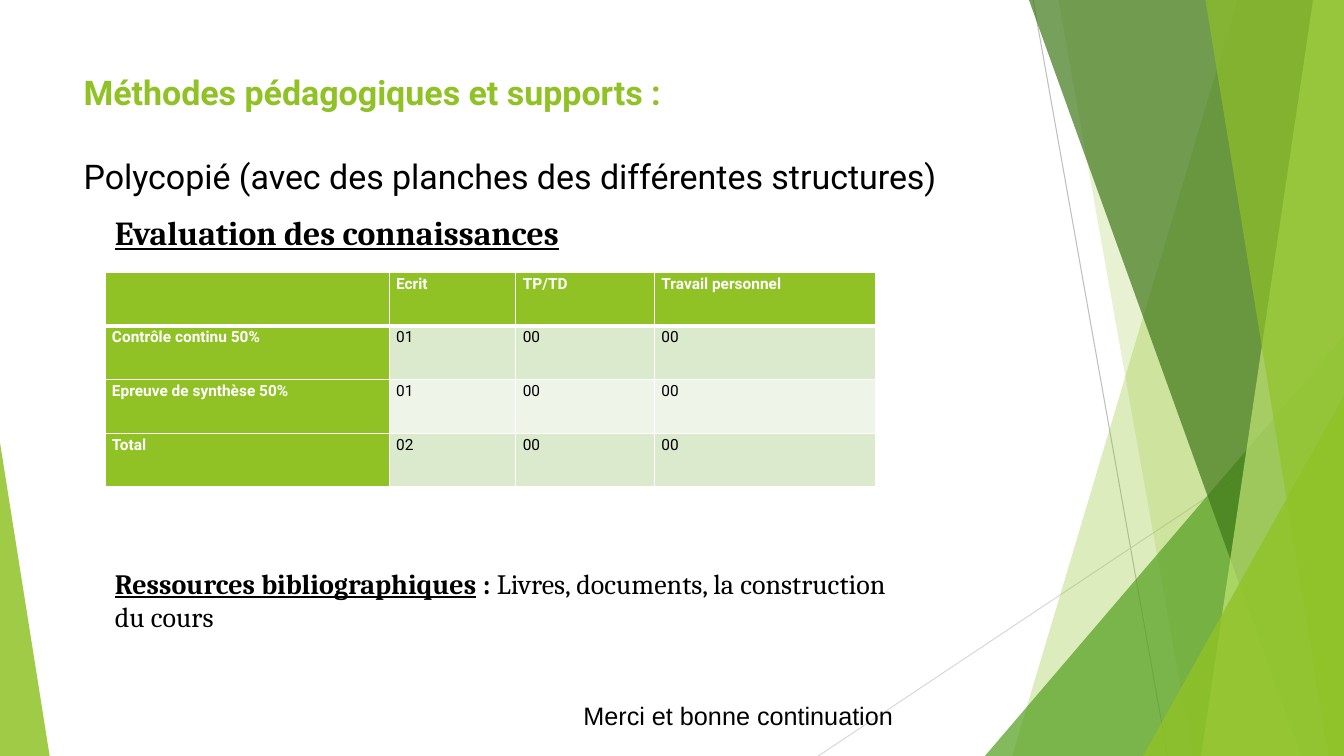
from lxml.etree import SubElement
from pptx import Presentation
from pptx.dml.color import RGBColor
from pptx.enum.shapes import MSO_CONNECTOR, MSO_SHAPE
from pptx.enum.text import MSO_ANCHOR, MSO_AUTO_SIZE, PP_ALIGN
from pptx.oxml.ns import qn
from pptx.util import Pt

WIDTH, HEIGHT = 960, 540
COLORS = {
    "lime": "90C226", "green": "54A021", "forest": "3F7819", "pale": "C0E474",
    "band": "DBE9CD", "light_band": "EEF4E8", "white": "FFFFFF",
    "black": "000000", "grey": "BFBFBF", "light_grey": "D9D9D9",
}
HEADING = "Méthodes pédagogiques et supports\u00a0:"
SUPPORT = "Polycopié (avec des planches des différentes structures)"
GRADES = [
    ["", "Ecrit", "TP/TD", "Travail personnel"],
    ["Contrôle continu 50%", "01", "00", "00"],
    ["Epreuve de synthèse 50%", "01", "00", "00"],
    ["Total", "02", "00", "00"],
]


def rgb(name):
    return RGBColor.from_string(COLORS[name])


class SlideBuilder:
    def __init__(self, slide):
        self.slide = slide
        self.shapes = slide.shapes

    def style(self, font, size, color="black", bold=False, name="Roboto"):
        font.name, font.size, font.bold = name, Pt(size), bold
        font.color.rgb = rgb(color)

    def line(self, x1, y1, x2, y2, color):
        cx = self.shapes.add_connector(
            MSO_CONNECTOR.STRAIGHT, Pt(x1), Pt(y1), Pt(x2), Pt(y2))
        cx.line.color.rgb = rgb(color)
        cx.line.width = Pt(0.75)
        SubElement(cx._element.spPr, qn("a:effectLst"))

    def paint(self, sp, color, opacity):
        sp.shadow.inherit = False
        sp.line.fill.background()
        sp.fill.solid()
        sp.fill.fore_color.rgb = rgb(color)
        clr = sp._element.spPr.find(".//" + qn("a:srgbClr"))
        SubElement(clr, qn("a:alpha"), val=str(opacity * 1000))

    def panel(self, top_x, bottom_x, color, opacity):
        """Full-height panel with a slanted left side, ending at the right edge."""
        builder = self.shapes.build_freeform(Pt(top_x), 0)
        corners = [(WIDTH, 0), (WIDTH, HEIGHT), (bottom_x, HEIGHT)]
        builder.add_line_segments([(Pt(x), Pt(y)) for x, y in corners])
        self.paint(builder.convert_to_shape(), color, opacity)

    def corner(self, x, width, height, apex, color, opacity):
        """Triangle standing on the bottom edge; apex is 0 for left, 1 for right."""
        sp = self.shapes.add_shape(
            MSO_SHAPE.ISOSCELES_TRIANGLE,
            Pt(x), Pt(HEIGHT - height), Pt(width), Pt(height))
        sp.adjustments[0] = apex
        self.paint(sp, color, opacity)

    def title(self, x, y, w, h, lines):
        """Fill the title with (text, color, bold) lines."""
        sp = self.shapes.title
        sp.left, sp.top, sp.width, sp.height = Pt(x), Pt(y), Pt(w), Pt(h)
        tf = sp.text_frame
        tf.word_wrap, tf.auto_size = True, MSO_AUTO_SIZE.NONE
        tf.vertical_anchor = MSO_ANCHOR.TOP
        for i, (text, color, bold) in enumerate(lines):
            p = tf.add_paragraph() if i else tf.paragraphs[0]
            p.text = text
            p.alignment = PP_ALIGN.LEFT
            p.space_before = Pt(30.5 if i else 0)
            self.style(p.font, 24.3, color, bold)

    def text(self, x, y, w, h, paragraphs):
        """Add (size, font, space before, alignment, runs) paragraphs.

        Each run is (text, bold, underline).
        """
        tf = self.shapes.add_textbox(Pt(x), Pt(y), Pt(w), Pt(h)).text_frame
        tf.word_wrap = True
        for i, (size, name, before, align, runs) in enumerate(paragraphs):
            p = tf.add_paragraph() if i else tf.paragraphs[0]
            p.alignment, p.space_before = align, Pt(before)
            self.style(p.font, size, name=name)
            for text, bold, underline in runs:
                r = p.add_run()
                r.text = text
                r.font.bold, r.font.underline = bold, underline

    def border(self, cell, side, width):
        ln = SubElement(cell._tc.get_or_add_tcPr(), qn("a:" + side),
                        w=str(Pt(width)))
        fill = SubElement(ln, qn("a:solidFill"))
        SubElement(fill, qn("a:srgbClr"), val=COLORS["white"])

    def table(self, x, y, widths, row_height, rows):
        tbl = self.shapes.add_table(
            len(rows), len(widths), Pt(x), Pt(y),
            Pt(sum(widths)), Pt(row_height * len(rows))).table
        for col, width in zip(tbl.columns, widths):
            col.width = Pt(width)
        for i, row in enumerate(rows):
            tbl.rows[i].height = Pt(row_height)
            for j, text in enumerate(row):
                cell = tbl.cell(i, j)
                header = i == 0 or j == 0
                cell.margin_left = cell.margin_right = Pt(5)
                cell.margin_top = cell.margin_bottom = 0
                for side in ("lnL", "lnR", "lnT", "lnB"):
                    thick = (i, side) in ((0, "lnB"), (1, "lnT"))
                    self.border(cell, side, 3 if thick else 1)
                cell.fill.solid()
                band = "band" if i % 2 else "light_band"
                cell.fill.fore_color.rgb = rgb("lime" if header else band)
                p = cell.text_frame.paragraphs[0]
                p.text = text
                p.line_spacing = 1.15
                self.style(p.font, 11, "white" if header else "black", header)


def main():
    prs = Presentation()
    prs.slide_width, prs.slide_height = Pt(WIDTH), Pt(HEIGHT)
    s = SlideBuilder(prs.slides.add_slide(prs.slide_layouts[5]))

    s.line(738, 0, 834, HEIGHT, "grey")
    s.line(WIDTH, 290, 584.5, HEIGHT, "light_grey")
    s.panel(884, 723, "lime", 30)
    s.panel(756, 852, "lime", 20)
    s.corner(703.5, 256.5, 300, 1, "green", 72)
    s.panel(735, 929.5, "forest", 70)
    s.panel(938, 858, "pale", 70)
    s.panel(861, 949, "lime", 65)
    s.corner(816.5, 143.5, 257, 1, "lime", 80)
    s.corner(0, 35.5, 224, 0, "lime", 85)

    s.title(52.5, 47.5, 677, 78,
            [(HEADING, "lime", True), (SUPPORT, "black", False)])
    s.table(75, 194.5, [203, 90.5, 99, 158], 38.3, GRADES)
    s.text(75, 148, 570, 378, [
        (24, "Cambria", 0, PP_ALIGN.LEFT,
         [("Evaluation des connaissances", True, True)]),
        (20, "Cambria", 224, PP_ALIGN.LEFT,
         [("Ressources bibliographiques", True, True),
          ("\u00a0: ", True, False),
          ("Livres, documents, la construction du cours", False, False)]),
        (18, "Arial", 48, PP_ALIGN.RIGHT,
         [("Merci et bonne continuation", False, False)]),
    ])
    prs.save("out.pptx")


if __name__ == "__main__":
    main()
